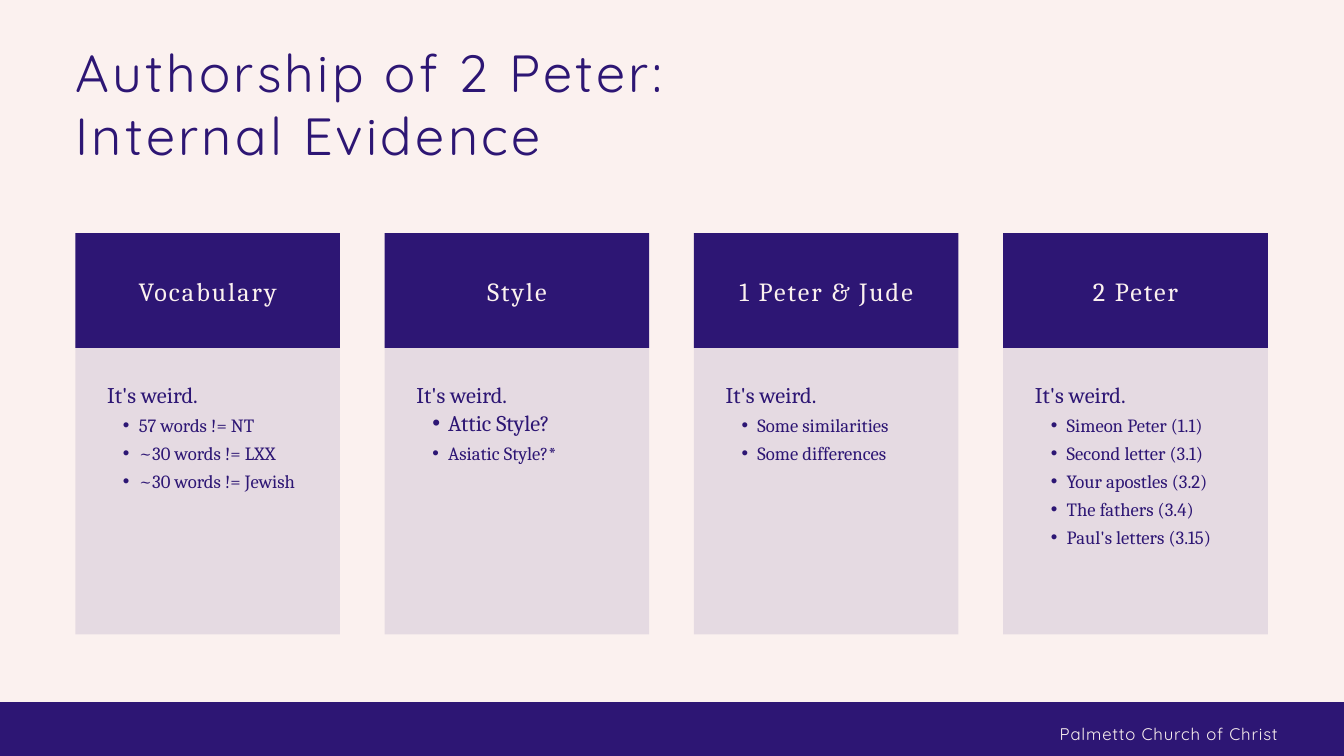
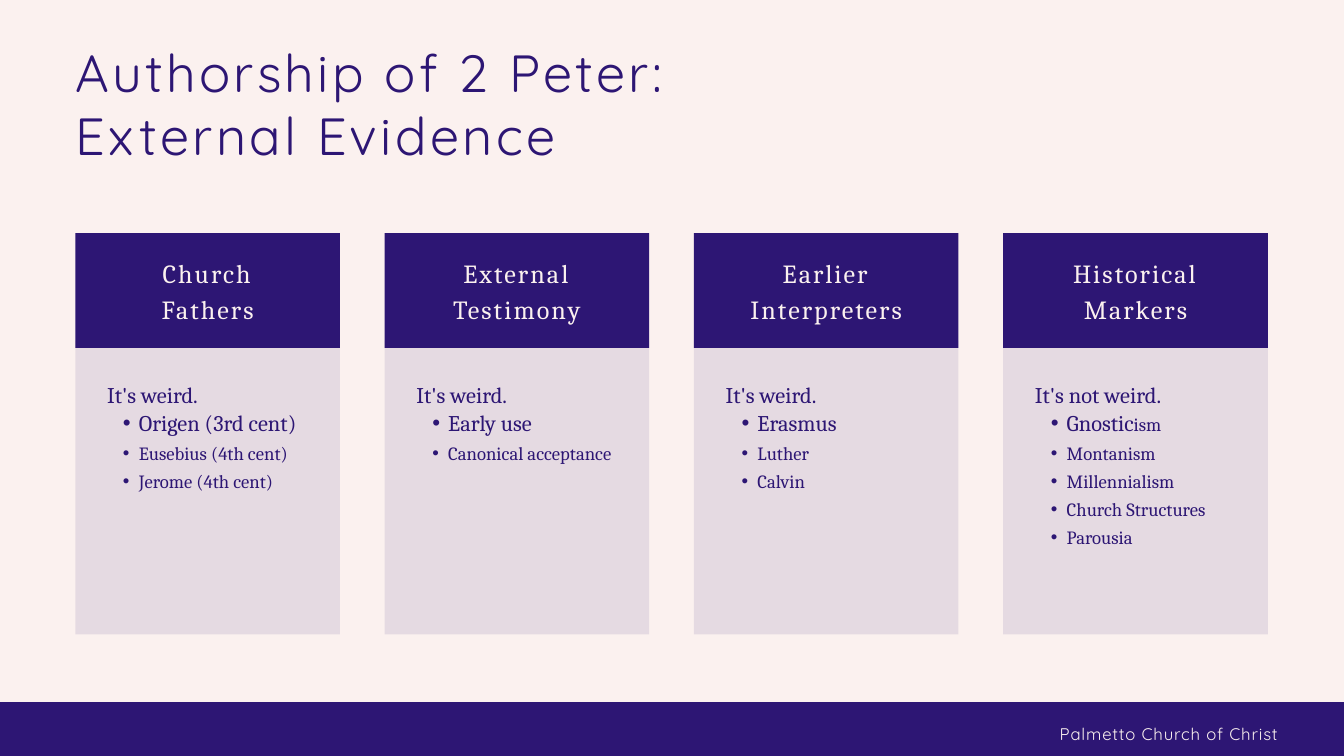
from lxml.etree import SubElement
from pptx import Presentation
from pptx.dml.color import RGBColor
from pptx.enum.shapes import MSO_SHAPE
from pptx.enum.text import PP_ALIGN
from pptx.oxml.ns import qn
from pptx.util import Cm, Pt

# A bullet is small text, or a pair of (large text, small text).
SLIDES = [
    ("Authorship of 2 Peter: Internal Evidence", [
        ("Vocabulary", "It's weird.",
         ["57 words != NT", "~30 words != LXX", "~30 words != Jewish"]),
        ("Style", "It's weird.", [("Attic Style?", ""), "Asiatic Style?*"]),
        ("1 Peter & Jude", "It's weird.", ["Some similarities", "Some differences"]),
        ("2 Peter", "It's weird.",
         ["Simeon Peter (1.1)", "Second letter (3.1)", "Your apostles (3.2)",
          "The fathers (3.4)", "Paul's letters (3.15)"]),
    ]),
    ("Authorship of 2 Peter: External Evidence", [
        ("Church Fathers", "It's weird.",
         [("Origen (3rd cent)", ""), "Eusebius (4th cent)", "Jerome (4th cent)"]),
        ("External Testimony", "It's weird.", [("Early use", ""), "Canonical acceptance"]),
        ("Earlier Interpreters", "It's weird.", [("Erasmus", ""), "Luther", "Calvin"]),
        ("Historical Markers", "It's not weird.",
         [("Gnostic", "ism"), "Montanism", "Millennialism", "Church Structures",
          "Parousia"]),
    ]),
]
FOOTER = "Palmetto Church of Christ"

PURPLE, CREAM = "2D1674", "FBF1EF"
SERIF, SANS = "Cambria", "Quicksand"
LARGE, SMALL = 24, 20

SLIDE_WIDTH, SLIDE_HEIGHT = 50.8, 28.58
LEFT, COLUMN_STEP, COLUMN_WIDTH = 2.85, 11.69, 10
HEADER_TOP, HEADER_HEIGHT = 8.81, 4.34
BODY_TOP, BODY_HEIGHT = 12.88, 11.1
HEADING_WIDTH, BODY_TEXT_WIDTH = 7.09, 7.6
HEADING_LINE = 39.2
OPENING_LINE, BULLET_LINE = 36, 30
CM_PER_POINT = 2.54 / 72


def color(code):
    return RGBColor.from_string(code)


def add_band(shapes, left, top, width, height, opacity=100):
    band = shapes.add_shape(MSO_SHAPE.RECTANGLE, Cm(left), Cm(top), Cm(width), Cm(height))
    band.shadow.inherit = False
    band.line.fill.background()
    band.fill.solid()
    band.fill.fore_color.rgb = color(PURPLE)
    if opacity < 100:
        fill = band.fill._xPr.find(qn("a:solidFill"))
        SubElement(fill[0], qn("a:alpha"), val=str(opacity * 1000))


def add_text_frame(shapes, left, top, width, height):
    frame = shapes.add_textbox(Cm(left), Cm(top), Cm(width), Cm(height)).text_frame
    frame.word_wrap = True
    frame.margin_left = frame.margin_right = frame.margin_top = frame.margin_bottom = 0
    return frame


def add_span(para, text, size, font=SERIF, ink=PURPLE, spacing=0):
    """Append one run; spacing is the tracking in points."""
    span = para.add_run()
    span.text = text
    span.font.size = Pt(size)
    span.font.name = font
    span.font.color.rgb = color(ink)
    if spacing:
        span.font._element.set("spc", str(round(spacing * 100)))


def add_line(shapes, place, text, line, align, **style):
    """Text box holding a single paragraph in a single style."""
    para = add_text_frame(shapes, *place).paragraphs[0]
    para.alignment = align
    para.line_spacing = Pt(line)
    add_span(para, text, **style)


def add_bullet(frame, bullet):
    para = frame.add_paragraph()
    para.level = 1
    properties = para._p.get_or_add_pPr()
    properties.set("marL", str(Cm(1.2)))
    properties.set("indent", str(-Cm(0.6)))
    SubElement(properties, qn("a:buFont"), typeface="Arial")
    SubElement(properties, qn("a:buChar"), char="•")
    para.line_spacing = Pt(BULLET_LINE)
    large, small = bullet if isinstance(bullet, tuple) else ("", bullet)
    for text, size in ((large, LARGE), (small, SMALL)):
        if text:
            add_span(para, text, size)


def add_column(shapes, left, heading, opening, bullets):
    add_band(shapes, left, BODY_TOP, COLUMN_WIDTH, BODY_HEIGHT, opacity=10)
    text_height = (OPENING_LINE + BULLET_LINE * len(bullets)) * CM_PER_POINT
    frame = add_text_frame(shapes, left + (COLUMN_WIDTH - BODY_TEXT_WIDTH) / 2,
                           BODY_TOP + 1.27, BODY_TEXT_WIDTH, text_height)
    para = frame.paragraphs[0]
    para.line_spacing = Pt(OPENING_LINE)
    add_span(para, opening, LARGE)
    for bullet in bullets:
        add_bullet(frame, bullet)

    add_band(shapes, left, HEADER_TOP, COLUMN_WIDTH, HEADER_HEIGHT)
    lines = 1 if len(heading) < 14 or "&" in heading else 2
    height = lines * HEADING_LINE * CM_PER_POINT
    place = (left + (COLUMN_WIDTH - HEADING_WIDTH) / 2,
             HEADER_TOP + (HEADER_HEIGHT - height) / 2 - 0.07, HEADING_WIDTH, height)
    add_line(shapes, place, heading, HEADING_LINE, PP_ALIGN.CENTER,
             size=28, ink=CREAM, spacing=2.2)


def add_footer(page):
    shapes = page.shapes.add_group_shape().shapes
    add_band(shapes, -0.94, 26.54, SLIDE_WIDTH + 2 * 0.94, 3.2)
    add_line(shapes, (18.85, 26.9, 29.46, 1.02), FOOTER, 34.2, PP_ALIGN.RIGHT,
             size=18, font=SANS, ink=CREAM, spacing=0.9)


def add_page(deck, title, columns):
    page = deck.slides.add_slide(deck.slide_layouts[6])
    page.background.fill.solid()
    page.background.fill.fore_color.rgb = color(CREAM)
    add_line(page.shapes, (LEFT, 1.52, 26.26, 4.75), title, 67.2, PP_ALIGN.LEFT,
             size=56, font=SANS, spacing=3.6)
    add_footer(page)
    for index, column in enumerate(columns):
        add_column(page.shapes, LEFT + index * COLUMN_STEP, *column)


def main():
    deck = Presentation()
    deck.slide_width, deck.slide_height = Cm(SLIDE_WIDTH), Cm(SLIDE_HEIGHT)
    for title, columns in SLIDES:
        add_page(deck, title, columns)
    deck.save("out.pptx")


if __name__ == "__main__":
    main()
